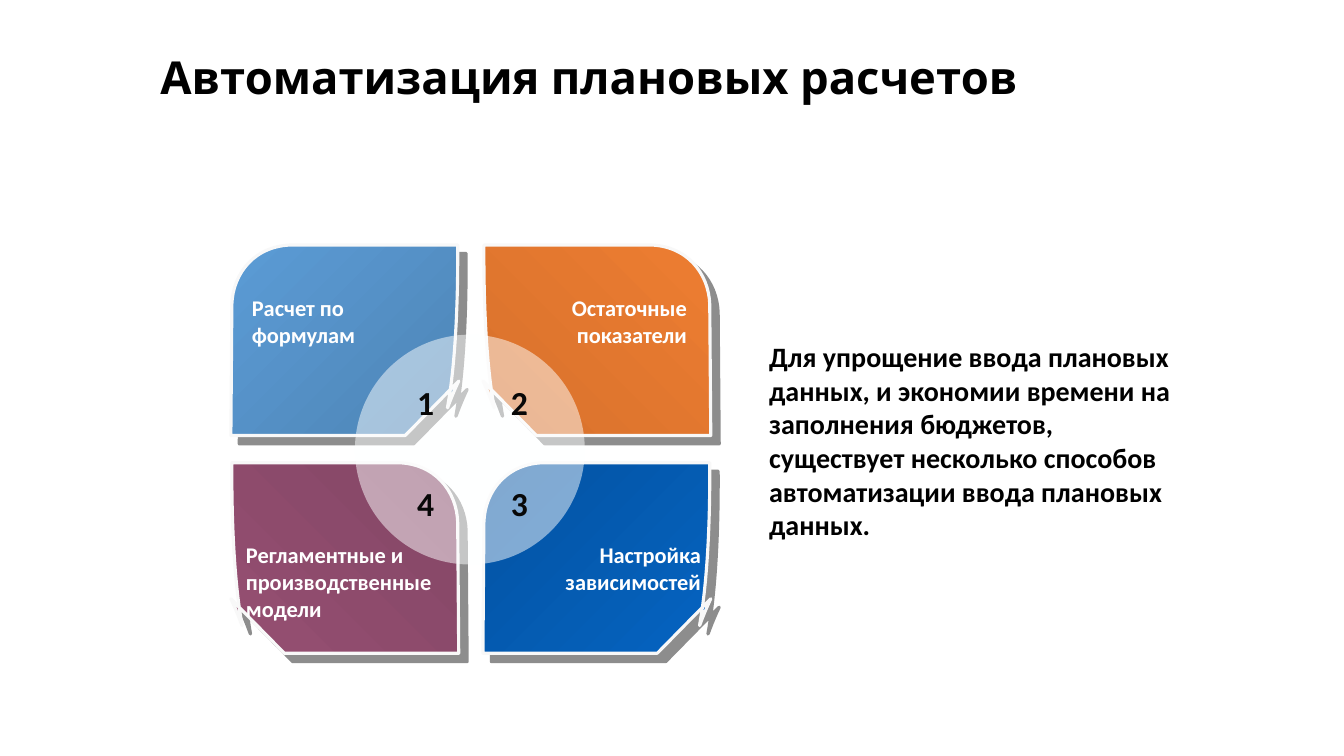
from lxml import etree
from pptx import Presentation
from pptx.dml.color import RGBColor
from pptx.enum.shapes import MSO_SHAPE
from pptx.enum.text import MSO_ANCHOR, MSO_AUTO_SIZE, PP_ALIGN
from pptx.oxml.ns import qn
from pptx.util import Inches, Pt

LEFT, RIGHT = PP_ALIGN.LEFT, PP_ALIGN.RIGHT
BOTTOM = MSO_ANCHOR.BOTTOM
FIT_SHAPE = MSO_AUTO_SIZE.SHAPE_TO_FIT_TEXT
ELLIPSE = MSO_SHAPE.OVAL

PETAL_WIDTH = 2.26
COLUMN_STEP, ROW_STEP = 2.5, 2.16

# Corners of a petal, and the control points of its rounded segments
PETAL_POINTS = [(1.73, 1.89), (0, 1.89), (0.01, 0.59), (0.62, 0),
                (2.25, 0), (2.26, 1.35), (1.73, 1.89)]
PETAL_CURVES = {2: [(0.02, 0.28), (0.24, 0)], 4: [(2.26, 1.71), (2.01, 1.88)]}

# row, column, gradient start and end, label, label box, number
PETALS = [
    (0, 0, "4E85B6", "5B9BD5", "Расчет по формулам", (0.11, 0.44, 2.03, 0.64), "1"),
    (0, 1, "D7712C", "ED7D31", "Остаточные показатели", (-0.07, 0.44, 2.19, 0.64), "2"),
    (1, 0, "954F72", "844665", "Регламентные и производственные модели",
     (0.05, 0.73, 2.19, 0.91), "4"),
    (1, 1, "0563C1", "0453A1", "Настройка зависимостей", (0.07, 0.73, 2.19, 0.64), "3"),
]


def color(hex_string):
    return RGBColor.from_string(hex_string)


def set_font(paragraph, name, size, hex_string):
    paragraph.font.name = name
    paragraph.font.size = Pt(size)
    paragraph.font.bold = True
    paragraph.font.color.rgb = color(hex_string)


def add_text(slide, text, left, top, width, height, size, hex_string,
             alignment=LEFT, wrap=True):
    box = slide.shapes.add_textbox(Inches(left), Inches(top), Inches(width), Inches(height))
    frame = box.text_frame
    frame.word_wrap = wrap
    frame.auto_size = FIT_SHAPE
    paragraph = frame.paragraphs[0]
    paragraph.text = text
    paragraph.alignment = alignment
    set_font(paragraph, "Calibri", size, hex_string)


def to_lengths(points, mirrored):
    return [(Inches(PETAL_WIDTH - x if mirrored else x), Inches(y)) for x, y in points]


def round_corners(petal, mirrored):
    """Turn the straight segments listed in PETAL_CURVES into cubic curves."""
    segments = list(petal.element.iter(qn("a:lnTo")))
    for index, controls in PETAL_CURVES.items():
        segment = segments[index - 1 + (index == 2) * 1 if index == 2 else index]
        bezier = etree.Element(qn("a:cubicBezTo"))
        for x, y in to_lengths(controls, mirrored):
            etree.SubElement(bezier, qn("a:pt"), x=str(x), y=str(y))
        bezier.append(segment[0])
        segment.getparent().replace(segment, bezier)


def add_shadow(shape):
    shape.shadow.inherit = False
    effects = shape.element.spPr.find(qn("a:effectLst"))
    shadow = etree.SubElement(effects, qn("a:outerShdw"), dist=str(Pt(8.5)),
                              dir="2700000", algn="ctr", rotWithShape="0")
    shadow_color = etree.SubElement(shadow, qn("a:srgbClr"), val="1C1C1C")
    etree.SubElement(shadow_color, qn("a:alpha"), val="50000")


def add_petal(slide, left, top, mirrored, gradient):
    points = to_lengths(PETAL_POINTS, mirrored)
    builder = slide.shapes.build_freeform(*points[0])
    builder.add_line_segments(points[1:], close=True)
    petal = builder.convert_to_shape(Inches(left), Inches(top))
    round_corners(petal, mirrored)
    petal.fill.gradient()
    petal.fill.gradient_angle = 45 if mirrored else 135
    for stop, hex_string in zip(petal.fill.gradient_stops, gradient):
        stop.color.rgb = color(hex_string)
    petal.line.color.rgb = color("F8F8F8")
    petal.line.width = Pt(2.25)
    add_shadow(petal)


def add_center_circle(slide, left, top, size):
    circle = slide.shapes.add_shape(ELLIPSE, Inches(left), Inches(top),
                                    Inches(size), Inches(size))
    circle.shadow.inherit = False
    circle.line.fill.background()
    circle.fill.solid()
    circle.fill.fore_color.rgb = color("FEFFFF")
    fill_color = circle.element.spPr.find(qn("a:solidFill")).find(qn("a:srgbClr"))
    etree.SubElement(fill_color, qn("a:alpha"), val="50000")


def add_diagram(slide, left, top):
    for row, column, start, end, *_ in PETALS:
        add_petal(slide, left + column * COLUMN_STEP, top + row * ROW_STEP,
                  row != column, (start, end))
    add_center_circle(slide, left + 1.23, top + 0.89, 2.28)
    for row, column, _, _, label, (x, y, width, height), number in PETALS:
        add_text(slide, label, left + column * COLUMN_STEP + x, top + row * ROW_STEP + y,
                 width, height, 16, "FFFFFF", RIGHT if column else LEFT)
        add_text(slide, number, left + 1.75 + column * 0.93, top + 1.31 + row,
                 0.37, 0.5, 24, "080808", wrap=False)


def add_title(slide, left, top, width, height):
    title = slide.shapes.title
    title.left, title.top = Inches(left), Inches(top)
    title.width, title.height = Inches(width), Inches(height)
    title.text_frame.vertical_anchor = BOTTOM
    title.text_frame.word_wrap = True
    paragraph = title.text_frame.paragraphs[0]
    paragraph.text = "Автоматизация плановых расчетов"
    paragraph.alignment = LEFT
    paragraph.line_spacing = 0.9
    set_font(paragraph, "Karla", 32.4, "000000")


def main():
    presentation = Presentation()
    presentation.slide_width = Inches(13.33)
    presentation.slide_height = Inches(7.5)
    slide = presentation.slides.add_slide(presentation.slide_layouts[0])
    subtitle = slide.placeholders[1].element
    subtitle.getparent().remove(subtitle)
    add_title(slide, 1.49, 0.46, 10.73, 0.63)
    add_diagram(slide, 2.29, 2.43)
    add_text(slide, "Для упрощение ввода плановых данных, и экономии времени на "
             "заполнения бюджетов, существует несколько способов автоматизации "
             "ввода плановых данных.", 7.53, 3.32, 4.3, 2.12, 20, "000000")
    presentation.save("out.pptx")


if __name__ == "__main__":
    main()
